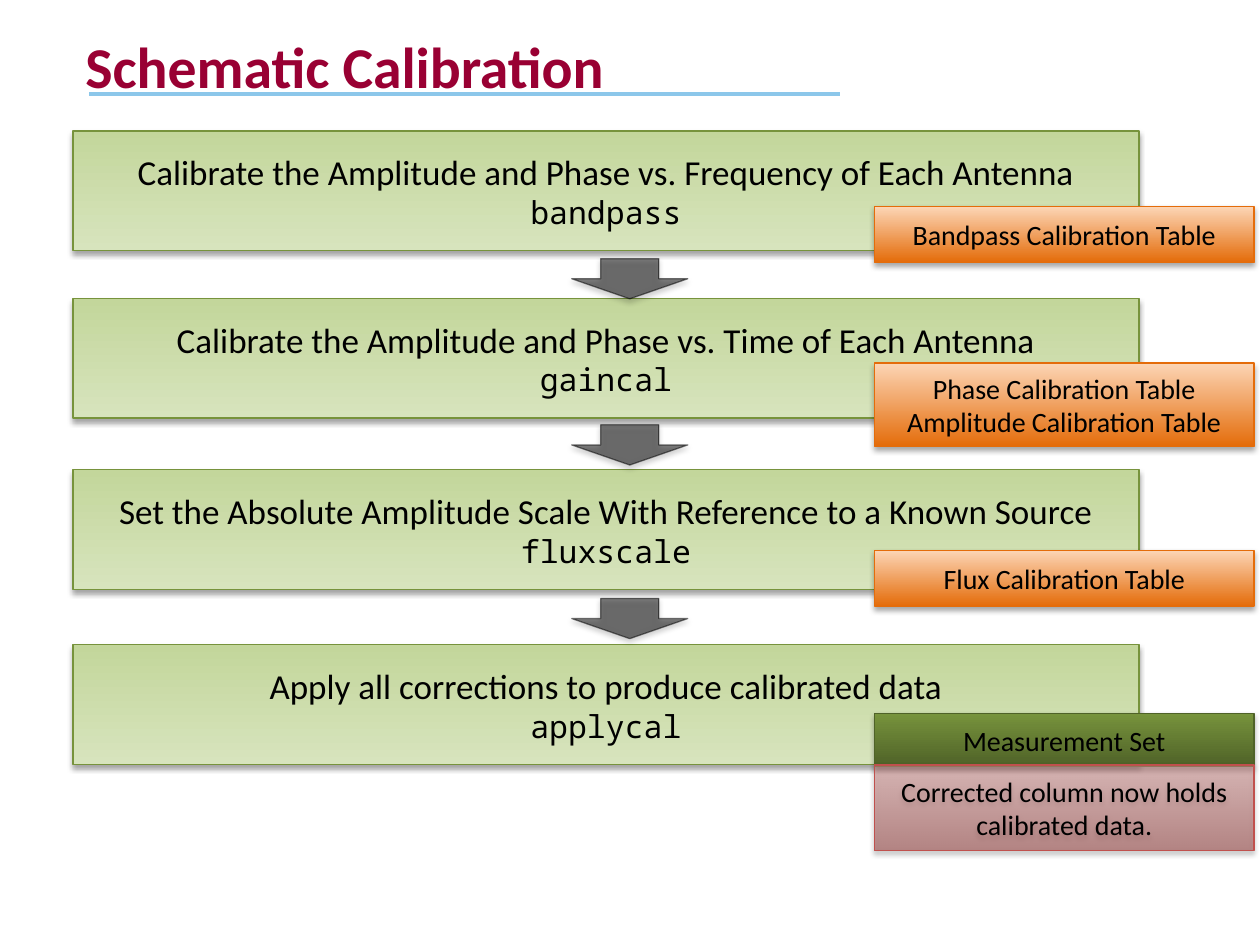
from lxml.etree import SubElement as Sub
from pptx import Presentation
from pptx.dml.color import RGBColor as RGB
from pptx.enum.shapes import MSO_CONNECTOR as LINK, MSO_SHAPE as FORM
from pptx.enum.text import MSO_ANCHOR as ANCHOR, PP_ALIGN as ALIGN
from pptx.oxml.ns import qn
from pptx.util import Cm, Pt

HUES = {
    "title": "990033", "rule": "8CC7EA", "black": "000000",
    "step": ("C3D69B", "D7E4BD", "77933C"),
    "table": ("FCD5B5", "E46C0A", "E46C0A"),
    "set": ("77933C", "4F6228", "4F6228"),
    "data": ("D99694", "953735", "C0504D"),
}
SANS, MONO = "Calibri", "Noto Sans Mono"

STEPS = [
    (2.64, "Calibrate the Amplitude and Phase vs. Frequency of Each Antenna", "bandpass"),
    (6.02, "Calibrate the Amplitude and Phase vs. Time of Each Antenna", "gaincal"),
    (9.47, "Set the Absolute Amplitude Scale With Reference to a Known Source", "fluxscale"),
    (13, "Apply all corrections to produce calibrated data", "applycal"),
]
ARROWS = [4.45, 7.8, 11.3]
NOTES = [
    (4.17, 1.12, "table", ["Bandpass Calibration Table"]),
    (7.32, 1.68, "table", ["Phase Calibration Table", "Amplitude Calibration Table"]),
    (11.1, 1.12, "table", ["Flux Calibration Table"]),
    (14.38, 1.07, "set", ["Measurement Set"]),
    (15.42, 1.73, "data", ["Corrected column now holds calibrated data."]),
]


def color(name):
    return RGB.from_string(name)


def write(frame, text, first=True, size=16, font=SANS, hue="black", bold=False, align=ALIGN.CENTER):
    frame.word_wrap = True
    frame.vertical_anchor = ANCHOR.MIDDLE
    par = frame.paragraphs[0] if first else frame.add_paragraph()
    par.alignment = align
    run = par.add_run()
    run.text = text
    run.font.size, run.font.name, run.font.bold = Pt(size), font, bold
    run.font.color.rgb = color(HUES[hue])


def fade(shape, share):
    for tint in shape._element.spPr.iter(qn("a:srgbClr")):
        Sub(tint, qn("a:alpha"), val=str(share * 1000))


def shade(shape):
    shape.shadow.inherit = False
    glow = shape._element.spPr.find(qn("a:effectLst"))
    drop = Sub(glow, qn("a:outerShdw"), blurRad=str(Pt(3.1)), dist=str(Pt(1.8)),
               dir="5400000", rotWithShape="0")
    tint = Sub(drop, qn("a:srgbClr"), val=HUES["black"])
    Sub(tint, qn("a:alpha"), val="35000")


def edge(shape, hue):
    shape.line.color.rgb = color(hue)
    shape.line.width = Pt(0.75)


def add_box(slide, left, top, width, height, kind):
    box = slide.shapes.add_shape(FORM.RECTANGLE, Cm(left), Cm(top), Cm(width), Cm(height))
    *ends, rim = HUES[kind]
    box.fill.gradient()
    box.fill.gradient_angle = 270
    for stop, place, hue in zip(box.fill.gradient_stops, (0, 1), ends):
        stop.position = place
        stop.color.rgb = color(hue)
    if kind == "data":
        fade(box, 50)
    edge(box, rim)
    shade(box)
    return box.text_frame


def add_arrow(slide, top):
    arrow = slide.shapes.add_shape(FORM.RIGHT_ARROW, Cm(12.29), Cm(top), Cm(0.81), Cm(2.34))
    arrow.rotation = 90
    arrow.fill.solid()
    arrow.fill.fore_color.rgb = color(HUES["black"])
    edge(arrow, HUES["black"])
    fade(arrow, 50)
    shade(arrow)


def add_title(slide, text):
    box = slide.shapes.add_textbox(Cm(1.47), 0, Cm(20.14), Cm(2.64))
    write(box.text_frame, text, size=33, hue="title", bold=True, align=ALIGN.LEFT)
    rule = slide.shapes.add_connector(LINK.STRAIGHT, Cm(1.8), Cm(1.9), Cm(16.94), Cm(1.9))
    rule.line.color.rgb = color(HUES["rule"])
    rule.line.width = Pt(2.25)
    Sub(rule._element.spPr, qn("a:effectLst"))


def main():
    deck = Presentation()
    deck.slide_width, deck.slide_height = Cm(25.4), Cm(19.05)
    slide = deck.slides.add_slide(deck.slide_layouts[6])
    add_title(slide, "Schematic Calibration")
    for top, text, task in STEPS:
        frame = add_box(slide, 1.47, top, 21.49, 2.41, "step")
        write(frame, text, size=20)
        write(frame, task, first=False, size=18, font=MONO)
    for top in ARROWS:
        add_arrow(slide, top)
    for top, height, kind, lines in NOTES:
        frame = add_box(slide, 17.63, top, 7.65, height, kind)
        for i, text in enumerate(lines):
            write(frame, text, first=i == 0)
    deck.save("out.pptx")


if __name__ == "__main__":
    main()
